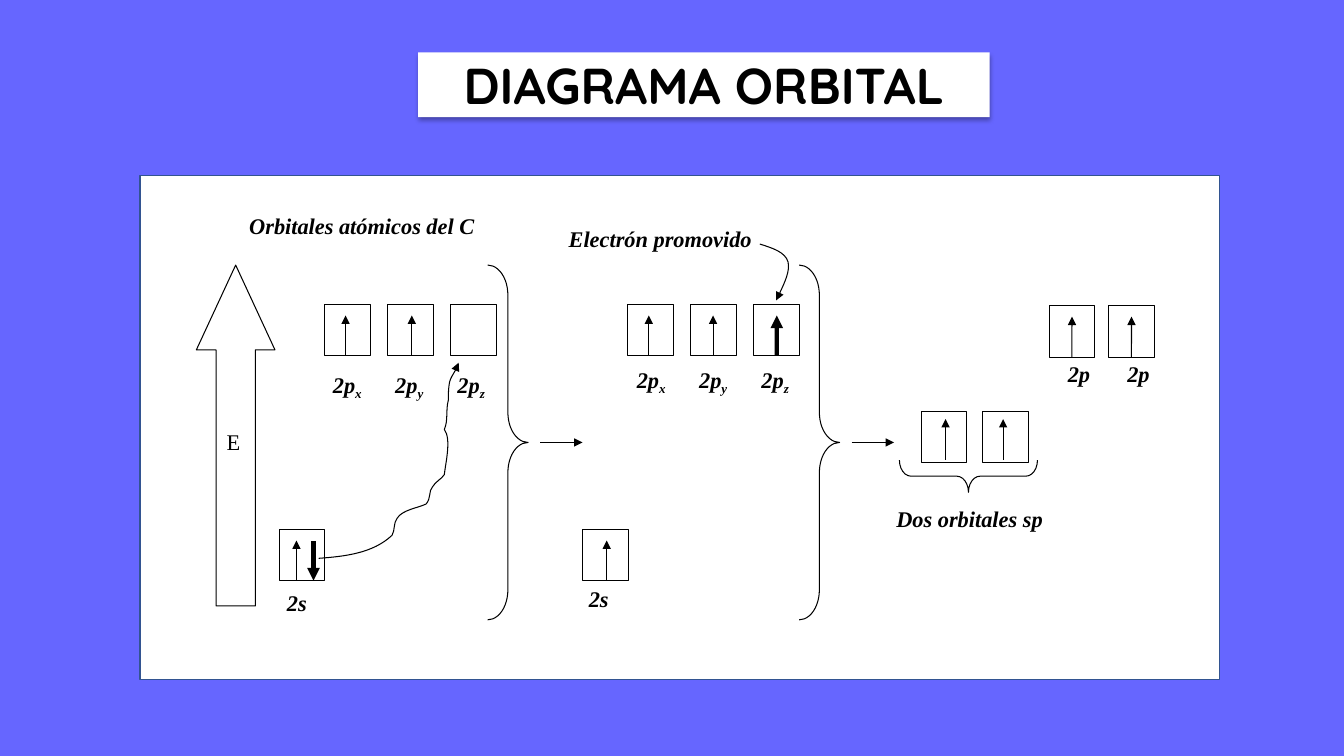
from lxml.etree import SubElement
from pptx import Presentation
from pptx.dml.color import RGBColor
from pptx.enum.shapes import MSO_CONNECTOR as Link, MSO_SHAPE as Preset
from pptx.enum.text import MSO_ANCHOR as Anchor, MSO_AUTO_SIZE as AutoSize, PP_ALIGN as Align
from pptx.oxml.ns import qn
from pptx.util import Cm, Pt

COLORS = {"back": "6666FF", "white": "FFFFFF", "ink": "000000", "frame": "325491"}
CELL_W, CELL_H = 1.15, 1.3   # orbital box, cm
MID = CELL_W / 2
STAGE = 7.64                 # from the ground state to the promoted state
THIN, THICK = 0.75, 3


def color(name):
    return RGBColor.from_string(COLORS[name])


class OrbitalPage:
    def __init__(self, deck):
        self.page = deck.slides.add_slide(deck.slide_layouts[5])
        self.page.background.fill.solid()
        self.page.background.fill.fore_color.rgb = color("back")

    def stroke(self, item, width=THIN, ink="ink", head=False):
        item.line.color.rgb = color(ink)
        item.line.width = Pt(width)
        if head:
            SubElement(item.line._get_or_add_ln(), qn("a:tailEnd"), type="triangle")

    def add_span(self, para, text, size=16, font="Times New Roman", bold=True, italic=True, base=0):
        span = para.add_run()
        span.text = text
        span.font.size, span.font.name = Pt(size), font
        span.font.bold, span.font.italic = bold, italic
        span.font.color.rgb = color("ink")
        if base:
            span.font._element.set("baseline", str(base))

    def title(self, text, x, y, w, h):
        box = self.page.shapes.title
        box.left, box.top, box.width, box.height = Cm(x), Cm(y), Cm(w), Cm(h)
        box.fill.solid()
        box.fill.fore_color.rgb = color("white")
        effects = SubElement(box._element.spPr, qn("a:effectLst"))
        shadow = SubElement(effects, qn("a:outerShdw"), blurRad=str(Pt(3.5)),
                            dist=str(Pt(2.2)), dir="5400000", algn="t", rotWithShape="0")
        tint = SubElement(shadow, qn("a:srgbClr"), val=COLORS["ink"])
        SubElement(tint, qn("a:alpha"), val="32000")
        frame = box.text_frame
        frame.auto_size, frame.vertical_anchor = AutoSize.NONE, Anchor.MIDDLE
        frame.paragraphs[0].alignment = Align.CENTER
        self.add_span(frame.paragraphs[0], text, 36, "Quicksand", italic=False)

    def text(self, text, x, y, w=1.5, h=1.3, sub="", align=Align.LEFT, **style):
        box = self.page.shapes.add_textbox(Cm(x), Cm(y), Cm(w), Cm(h))
        box.text_frame.word_wrap = True
        para = box.text_frame.paragraphs[0]
        para.alignment = align
        self.add_span(para, text, **style)
        if sub:
            self.add_span(para, sub, base=-25000)

    def shape(self, kind, x, y, w, h, adjust=(), fill=None, ink="ink", width=THIN, turn=0):
        item = self.page.shapes.add_shape(kind, Cm(x), Cm(y), Cm(w), Cm(h))
        item.shadow.inherit = False
        item.rotation = turn
        for index, value in enumerate(adjust):
            item.adjustments[index] = value
        if fill:
            item.fill.solid()
            item.fill.fore_color.rgb = color(fill)
        else:
            item.fill.background()
        self.stroke(item, width, ink)
        return item

    def arrow(self, x1, y1, x2, y2, width=THIN):
        link = self.page.shapes.add_connector(Link.STRAIGHT, Cm(x1), Cm(y1), Cm(x2), Cm(y2))
        self.stroke(link, width, head=True)
        SubElement(link._element.spPr, qn("a:effectLst"))
        return link

    def orbital(self, x, y, spin=None, width=THIN, top=0.28, foot=CELL_H):
        """Draw one orbital box; spin is the electron's offset from its left side."""
        cell = self.shape(Preset.RECTANGLE, x, y, CELL_W, CELL_H)
        if spin is not None:
            electron = self.arrow(x + spin, y + foot, x + spin, y + top, width)
            if spin == MID and foot == CELL_H:
                electron.begin_connect(cell, 2)

    def curve(self, points):
        """Draw a Bézier arrow: a start point, then three points per segment."""
        start, *rest = [(Cm(x), Cm(y)) for x, y in points]
        builder = self.page.shapes.build_freeform(*start)
        builder.add_line_segments(rest, close=False)
        item = builder.convert_to_shape()
        item.shadow.inherit = False
        item.fill.background()
        self.stroke(item, head=True)
        steps = list(item._element.iter(qn("a:lnTo")))
        outline = steps[0].getparent()
        for first in range(0, len(steps), 3):
            bend = SubElement(outline, qn("a:cubicBezTo"))
            for step in steps[first:first + 3]:
                bend.append(step[0])
                outline.remove(step)


def main():
    deck = Presentation()
    deck.slide_width, deck.slide_height = Cm(33.87), Cm(19.05)
    page = OrbitalPage(deck)
    page.title("DIAGRAMA ORBITAL", 10.54, 1.32, 14.4, 1.63)
    page.shape(Preset.RECTANGLE, 3.53, 4.42, 27.2, 12.7, fill="white", ink="frame", width=1)

    # Energy axis
    page.shape(Preset.UP_ARROW, 4.95, 6.68, 1.98, 8.59, (0.5, 1.079))
    page.text("E", 5.46, 10.67, 0.94, bold=False, italic=False)

    # Captions
    for caption, x, y, w in (("Orbitales atómicos del C", 5.13, 5.21, 7.98),
                             ("Electrón promovido", 13.34, 5.54, 6.6),
                             ("Dos orbitales sp", 21.54, 12.6, 5.79)):
        page.text(caption, x, y, w, align=Align.CENTER)

    # 2p orbitals of the ground and promoted states
    p_rows = ((8.18, 8.14, 9.22, ((0.53, THIN), (0.61, THIN), (None, THIN))),
              (8.18 + STAGE, 15.8, 9.09, ((0.53, THIN), (0.56, THIN), (MID, THICK))))
    for cell_x, label_x, label_y, electrons in p_rows:
        for index, (axis, (spin, width)) in enumerate(zip("xyz", electrons)):
            page.orbital(cell_x + 1.59 * index, 7.67, spin, width)
            page.text("2p", label_x + 1.57 * index, label_y, sub=axis)

    # 2s orbitals, the first with a paired electron
    for cell_x, spin, label_x, label_y in ((7.04, 0.43, 6.98, 14.73),
                                           (7.04 + STAGE, 0.61, 14.59, 14.63)):
        page.orbital(cell_x, 13.34, spin)
        page.text("2s", label_x, label_y)
    page.arrow(7.9, 13.64, 7.9, 14.63, THICK)

    # Braces and step arrows between the stages
    for shift in (0, 7.85):
        page.shape(Preset.RIGHT_BRACE, 12.29 + shift, 6.68, 1.02, 8.94, (0.742, 0.5))
        page.arrow(13.61 + shift, 11.15, 14.68 + shift, 11.15)

    # Hybrid sp orbitals
    for cell_x, spin in ((23.22, 0.61), (24.77, 0.51)):
        page.orbital(cell_x, 10.36, spin, top=0.2, foot=1.22)
    page.shape(Preset.RIGHT_BRACE, 24, 10.26, 0.81, 3.48, (0.362, 0.5), turn=90)

    # Remaining 2p orbitals
    for index in range(2):
        page.orbital(26.44 + 1.5 * index, 7.7, MID)
        page.text("2p", 26.66 + 1.5 * index, 8.96)

    # Curved arrows of the promoted electron
    page.curve([(19.15, 6.15), (19.46, 6.25), (19.79, 6.35), (19.86, 6.6),
                (19.91, 6.83), (19.74, 7.21), (19.56, 7.57)])
    page.curve([(8.03, 14.07), (8.71, 14.02), (9.4, 13.94), (9.88, 13.49),
                (9.96, 13.36), (9.91, 13.18), (10.01, 13.06),
                (10.13, 12.85), (10.54, 12.8), (10.74, 12.7),
                (10.87, 12.55), (10.8, 12.37), (10.9, 12.27),
                (10.97, 12.14), (11.13, 12.07), (11.2, 11.96),
                (11.23, 11.66), (11.38, 11.07), (11.2, 10.82),
                (11.3, 10.59), (11.23, 10.34), (11.3, 10.08),
                (11.3, 9.93), (11.3, 9.78), (11.33, 9.63),
                (11.35, 9.53), (11.56, 9.22), (11.56, 9.14)])
    deck.save("out.pptx")


if __name__ == "__main__":
    main()
